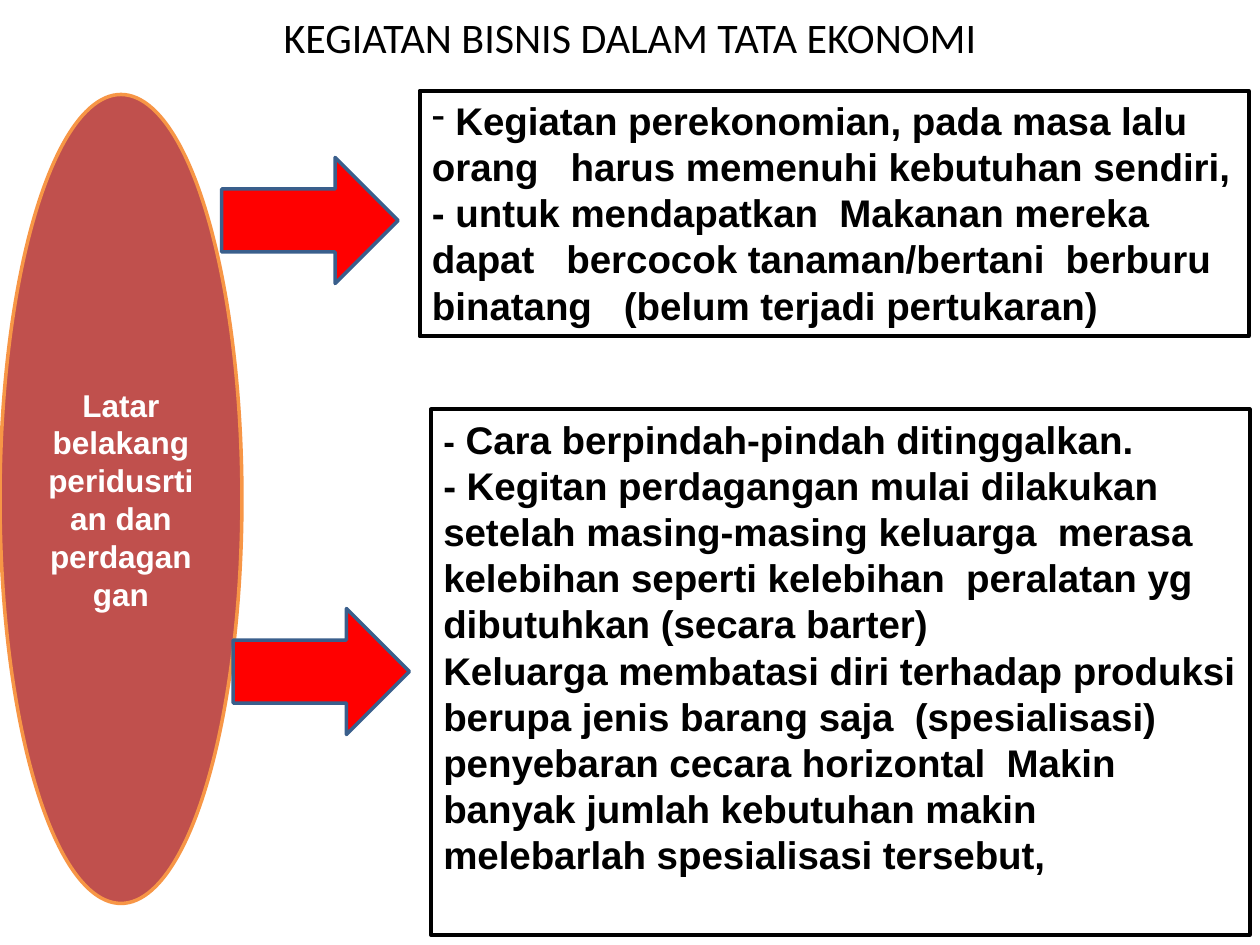
from lxml import etree
from pptx import Presentation
from pptx.dml.color import RGBColor
from pptx.enum.shapes import MSO_SHAPE
from pptx.enum.text import MSO_ANCHOR, PP_ALIGN
from pptx.oxml.ns import qn
from pptx.util import Inches, Pt

OVAL, RECT, ARROW = MSO_SHAPE.OVAL, MSO_SHAPE.RECTANGLE, MSO_SHAPE.RIGHT_ARROW
LEFT, CENTER = PP_ALIGN.LEFT, PP_ALIGN.CENTER
TOP, MIDDLE = MSO_ANCHOR.TOP, MSO_ANCHOR.MIDDLE

BLACK = RGBColor(0, 0, 0)
WHITE = RGBColor(255, 255, 255)
BRICK = RGBColor(0xC0, 0x50, 0x4D)
ORANGE = RGBColor(0xF7, 0x96, 0x46)
RED = RGBColor(255, 0, 0)
BLUE = RGBColor(0x3A, 0x5F, 0x8C)

TITLE = "KEGIATAN BISNIS DALAM TATA EKONOMI"
TOPIC = "Latar belakang peridusrtian dan perdagangan"
# Each paragraph is a list of (text, size) runs.
PAST = [
    [(" Kegiatan perekonomian, pada masa lalu orang   harus memenuhi "
      "kebutuhan sendiri, - untuk mendapatkan  Makanan mereka dapat   "
      "bercocok tanaman/bertani  berburu binatang   "
      "(belum terjadi pertukaran)", 22)],
]
TRADE = [
    [("-", 20), (" Cara berpindah-pindah ditinggalkan.", 22)],
    [("- Kegitan perdagangan mulai dilakukan setelah masing-masing keluarga  "
      "merasa kelebihan seperti kelebihan  peralatan yg dibutuhkan "
      "(secara barter)", 22)],
    [("Keluarga membatasi diri terhadap produksi berupa jenis barang saja  "
      "(spesialisasi) penyebaran cecara horizontal  Makin banyak jumlah "
      "kebutuhan makin melebarlah spesialisasi tersebut,", 22)],
]
BOXES = [
    ((3.33, 0.72, 6.58, 1.95), PAST),
    ((3.42, 3.25, 6.5, 4.17), TRADE),
]
ARROWS = [(1.85, 4.83), (1.76, 1.25)]


def add_shape(slide, kind, place, fill, line, width):
    shape = slide.shapes.add_shape(kind, *map(Inches, place))
    shape.shadow.inherit = False
    if fill is None:
        shape.fill.background()
    else:
        shape.fill.solid()
        shape.fill.fore_color.rgb = fill
    shape.line.color.rgb = line
    shape.line.width = Pt(width)
    return shape


def write(shape, paras, color, align=LEFT, anchor=TOP, font="Arial", bold=True):
    frame = shape.text_frame
    frame.word_wrap = True
    frame.vertical_anchor = anchor
    for i, runs in enumerate(paras):
        para = frame.add_paragraph() if i else frame.paragraphs[0]
        para.alignment = align
        for text, size in runs:
            run = para.add_run()
            run.text = text
            run.font.name = font
            run.font.size = Pt(size)
            run.font.bold = bold
            run.font.color.rgb = color


def add_dash(para):
    """Give the paragraph a dash bullet with no indent."""
    props = para._p.get_or_add_pPr()
    props.set("marL", "0")
    props.set("indent", "0")
    etree.SubElement(props, qn("a:buFontTx"))
    etree.SubElement(props, qn("a:buChar")).set("char", "-")


def main():
    deck = Presentation()
    deck.slide_width, deck.slide_height = Inches(10), Inches(7.5)
    slide = deck.slides.add_slide(deck.slide_layouts[6])

    title = slide.shapes.add_textbox(0, 0, Inches(10), Inches(0.58))
    write(title, [[(TITLE, 24)]], BLACK, CENTER, MIDDLE, "Calibri", False)

    oval = add_shape(slide, OVAL, (0, 0.75, 1.92, 6.42), BRICK, ORANGE, 2)
    write(oval, [[(TOPIC, 18)]], WHITE, CENTER, MIDDLE)

    for place, paras in BOXES:
        box = add_shape(slide, RECT, place, None, BLACK, 2.25)
        write(box, paras, BLACK)
        if paras is PAST:
            add_dash(box.text_frame.paragraphs[0])

    for left, top in ARROWS:
        add_shape(slide, ARROW, (left, top, 1.4, 1), RED, BLUE, 2)

    deck.save("out.pptx")


if __name__ == "__main__":
    main()
